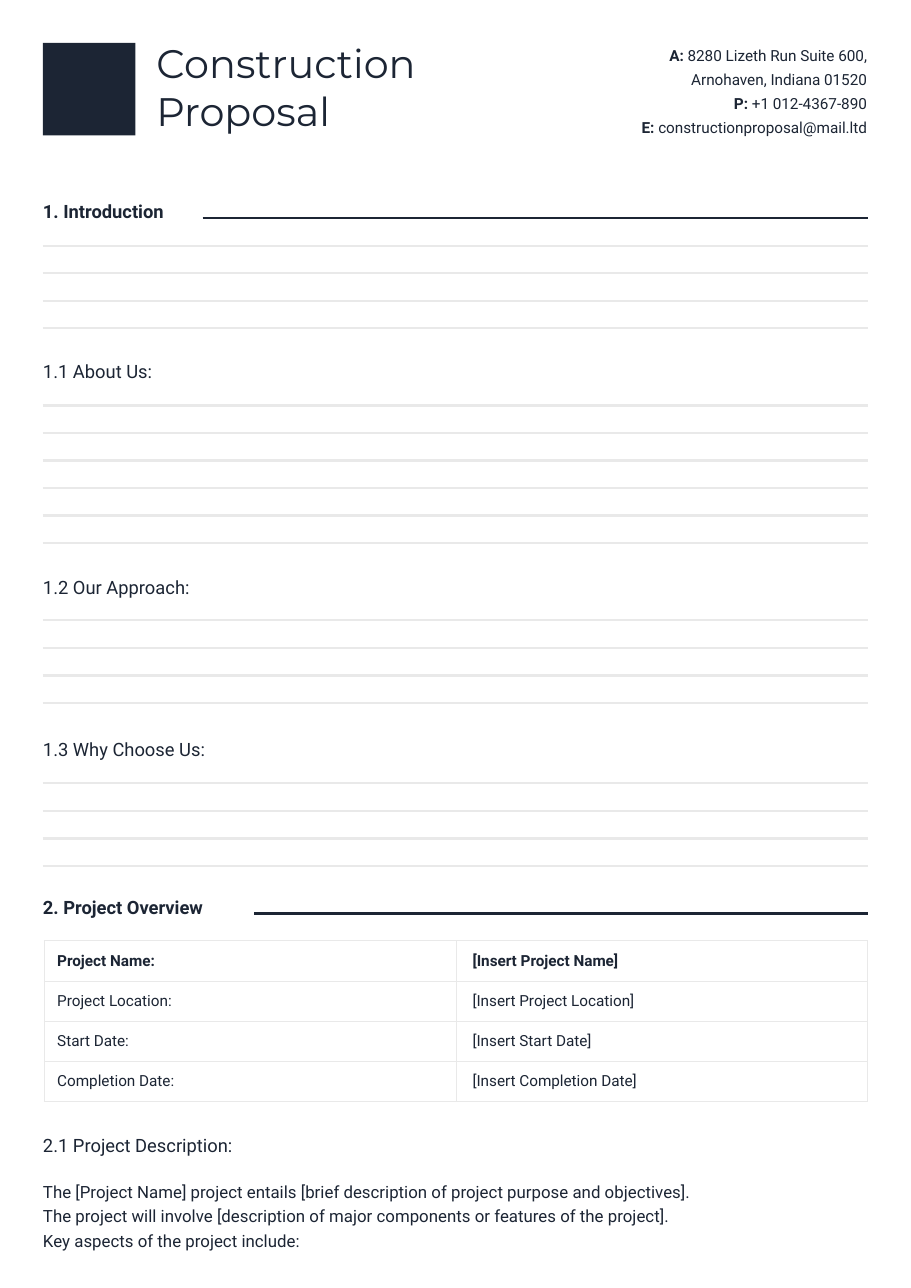
from dataclasses import dataclass

from lxml import etree
from pptx import Presentation, util as u
from pptx.dml.color import RGBColor
from pptx.enum import shapes, text as t
from pptx.oxml import ns


@dataclass
class Theme:
    ink: str = "1C2534"
    pale: str = "E9E9E9"
    head: str = "Montserrat"
    body: str = "Roboto"
    title: int = 26
    label: int = 12
    text: int = 11
    small: int = 10


look = Theme()
ink = RGBColor.from_string(look.ink)
pale = RGBColor.from_string(look.pale)
left, right = 0.39, 7.88

deck = Presentation()
deck.slide_width, deck.slide_height = u.Inches(8.27), u.Inches(11.69)
page = deck.slides.add_slide(deck.slide_layouts[1])


def write(text, at=None, box=None, frame=None, size=look.label, font=look.body,
          bold=False, align=t.PP_ALIGN.LEFT, space=1.0):
    """Write lines of text; the part of a line before a bar is bold."""
    if frame is None:
        box = box or page.shapes.add_textbox(0, 0, 0, 0)
        box.left, box.top, box.width, box.height = map(u.Inches, at)
        frame = box.text_frame
        frame.margin_left = frame.margin_right = 0
        frame.margin_top = frame.margin_bottom = 0
        frame.vertical_anchor = t.MSO_ANCHOR.TOP
        frame.auto_size = t.MSO_AUTO_SIZE.NONE
    frame.word_wrap = True
    for i, line in enumerate(text.split("\n")):
        para = frame.add_paragraph() if i else frame.paragraphs[0]
        para.alignment, para.line_spacing = align, space
        para.space_before = para.space_after = u.Pt(0)
        key, _, rest = line.rpartition("|")
        for part, heavy in ((key, True), (rest, bold)):
            if part:
                run = para.add_run()
                run.text = part
                run.font.name, run.font.size = font, u.Pt(size)
                run.font.bold, run.font.color.rgb = heavy, ink
    return frame


def rule(x, y, color):
    line = page.shapes.add_connector(
        shapes.MSO_CONNECTOR.STRAIGHT,
        u.Inches(x), u.Inches(y), u.Inches(right), u.Inches(y))
    line.line.color.rgb, line.line.width = color, u.Pt(1.5)
    etree.SubElement(line._element.spPr, ns.qn("a:effectLst"))


# Header: square, title and contact details
mark = page.shapes.add_shape(
    shapes.MSO_SHAPE.RECTANGLE, u.Inches(left), u.Inches(left),
    u.Inches(0.84), u.Inches(0.84))
mark.shadow.inherit = False
mark.fill.solid()
mark.fill.fore_color.rgb = ink
mark.line.fill.background()
write("Construction\nProposal", at=(1.42, 0.35, 3.28, 0.88),
      box=page.shapes.title, size=look.title, font=look.head)
write("A:| 8280 Lizeth Run Suite 600,\nArnohaven, Indiana 01520\n"
      "P:| +1 012-4367-890\nE:| constructionproposal@mail.ltd",
      at=(4.72, 0.37, 3.15, 0.82), size=look.small,
      align=t.PP_ALIGN.RIGHT, space=1.3)

# Main headings, each with a dark rule
for name, y, x in (("1. Introduction", 1.82, 1.84),
                   ("2. Project Overview", 8.13, 2.31)):
    write(name, at=(left, y, 1.86, 0.2), bold=True)
    rule(x, y + 0.16, ink)

# Subheadings
for name, y in (("1.1 About Us:", 3.27), ("1.2 Our Approach:", 5.23),
                ("1.3 Why Choose Us:", 6.7),
                ("2.1 Project Description:", 10.29)):
    write(name, at=(left, y, 3.05, 0.2))

# Writing lines: first line and number of lines
for top, count in ((2.23, 4), (3.68, 6), (5.63, 4), (7.11, 4)):
    for i in range(count):
        rule(left, top + 0.25 * i, pale)

# Project table
rows = (("Project Name:", "[Insert Project Name]"),
        ("Project Location:", "[Insert Project Location]"),
        ("Start Date:", "[Insert Start Date]"),
        ("Completion Date:", "[Insert Completion Date]"))
grid = page.shapes.add_table(
    len(rows), 2, u.Inches(0.4), u.Inches(8.54),
    u.Inches(7.48), u.Inches(1.46)).table
for r, row in enumerate(rows):
    for c, words in enumerate(row):
        cell = grid.cell(r, c)
        cell.margin_left = u.Inches((0.12, 0.15)[c])
        cell.margin_top = cell.margin_bottom = 0
        cell.vertical_anchor = t.MSO_ANCHOR.MIDDLE
        cell.fill.background()
        write(words, frame=cell.text_frame, size=look.small, bold=r == 0)
        props = cell._tc.get_or_add_tcPr()
        for i, side in enumerate("LRTB"):
            edge = etree.Element(ns.qn("a:ln" + side), w=str(u.Pt(0.75)))
            fill = etree.SubElement(edge, ns.qn("a:solidFill"))
            etree.SubElement(fill, ns.qn("a:srgbClr"), val=look.pale)
            props.insert(i, edge)

# Project description
note = write(
    "The [Project Name] project entails [brief description of project purpose"
    " and objectives].\nThe project will involve [description of major"
    " components or features of the project].\n"
    "Key aspects of the project include:",
    at=(left, 10.69, 7.48, 0.63), box=page.placeholders[1],
    size=look.text, space=1.2)
for para in note.paragraphs:
    props = para._p.get_or_add_pPr()
    props.set("marL", "0")
    props.set("indent", "0")
    etree.SubElement(props, ns.qn("a:buNone"))

deck.save("out.pptx")
